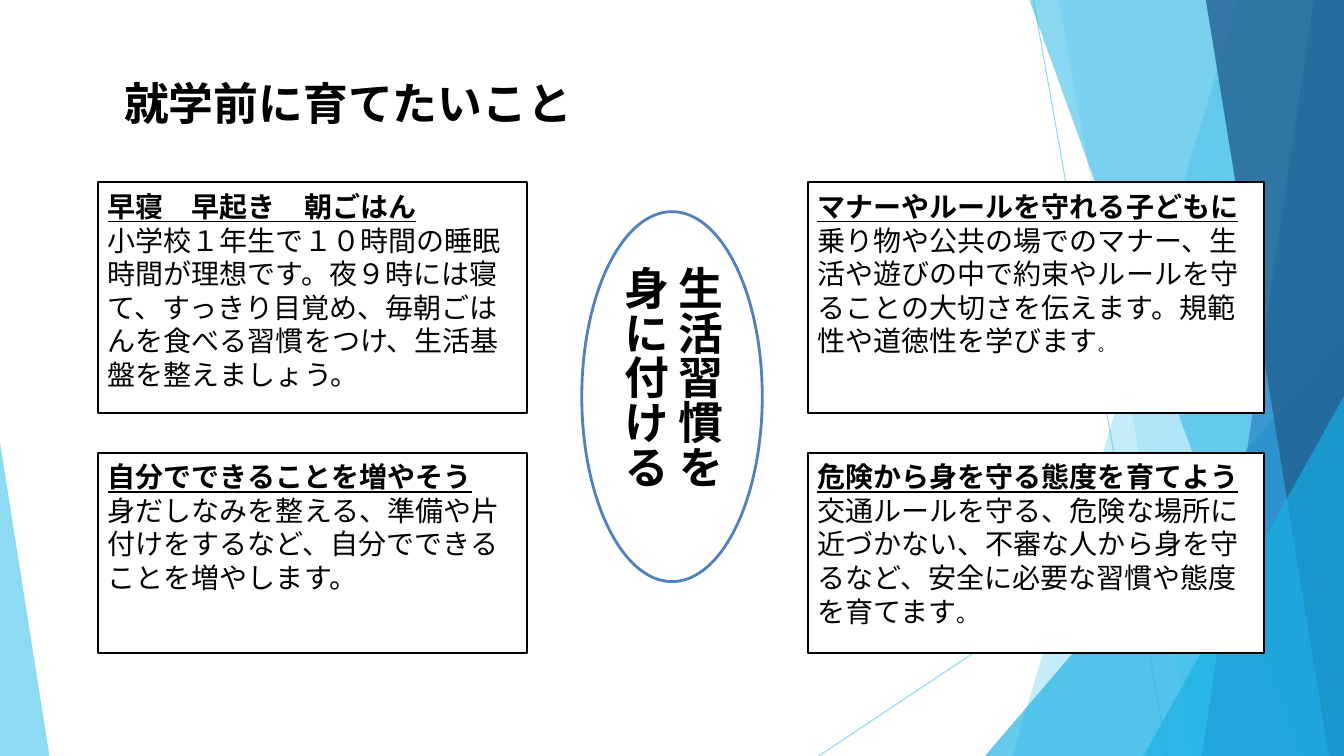
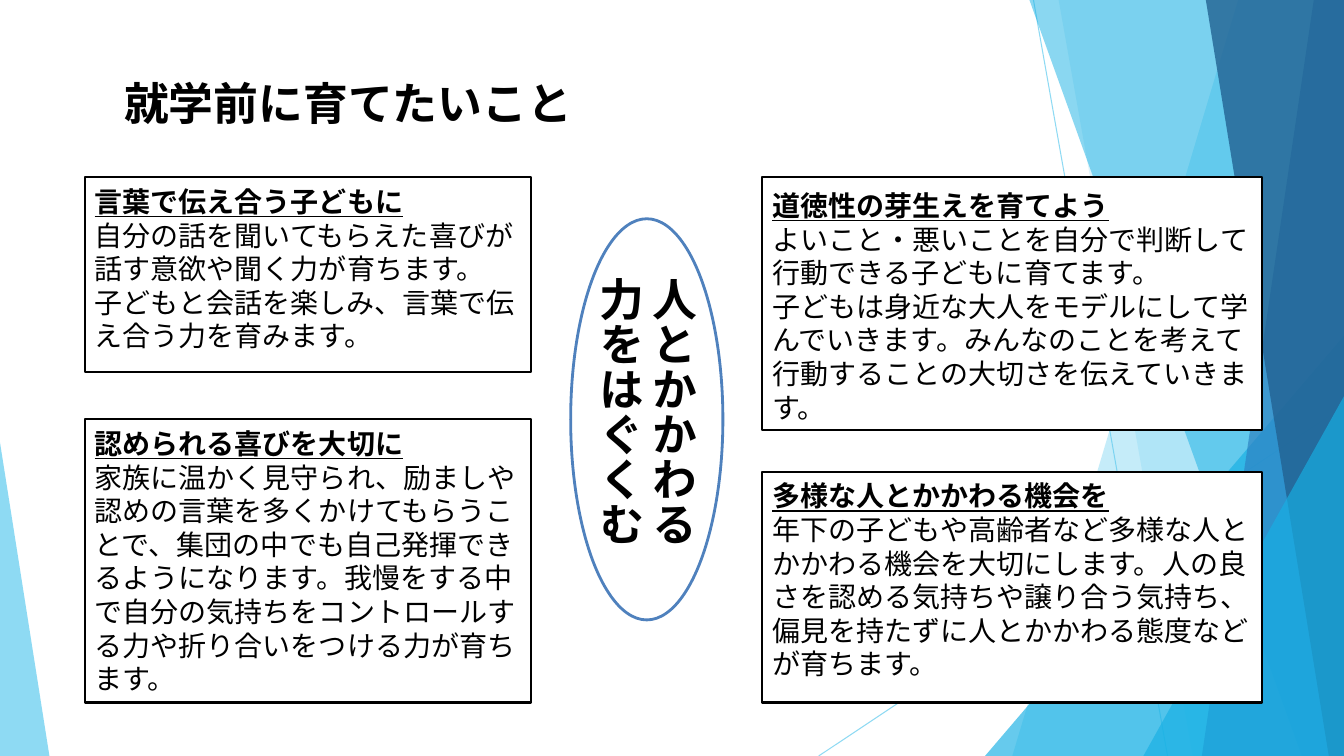
from lxml.etree import SubElement
from pptx import Presentation
from pptx.dml.color import RGBColor
from pptx.enum.lang import MSO_LANGUAGE_ID
from pptx.enum.shapes import MSO_CONNECTOR, MSO_SHAPE
from pptx.enum.text import MSO_ANCHOR, MSO_AUTO_SIZE, PP_ALIGN
from pptx.oxml.ns import qn
from pptx.util import Inches, Pt

WIDTH, HEIGHT = 13.33, 7.5
LATIN, JAPANESE = "Arial", "Noto Sans CJK JP"
BLACK, WHITE, OUTLINE = "000000", "FFFFFF", "4F81BD"
SKY, CYAN, BLUE, NAVY = "5FCBEF", "17B0E4", "2E83C3", "226292"
TITLE = "就学前に育てたいこと"


def rgb(color):
    return RGBColor.from_string(color)


def set_alpha(sp, percent):
    """Make the first solid colour of the shape partly transparent."""
    color = next(sp.element.spPr.iter(qn("a:srgbClr")))
    SubElement(color, qn("a:alpha")).set("val", str(percent * 1000))


def add_run(p, text, size=20, font=LATIN, bold=False, underline=False):
    r = p.add_run()
    r.text = text
    f = r.font
    f.name, f.size, f.bold, f.underline = font, Pt(size), bold, underline
    f.language_id = MSO_LANGUAGE_ID.JAPANESE
    f.color.rgb = rgb(BLACK)
    latin = r._r.rPr.find(qn("a:latin"))
    ea = latin.makeelement(qn("a:ea"), {"typeface": JAPANESE})
    latin.addnext(ea)


class Deck:
    def __init__(self):
        self.prs = Presentation()
        self.prs.slide_width = Inches(WIDTH)
        self.prs.slide_height = Inches(HEIGHT)
        self.layout = self.prs.slide_layouts[5]
        self.slide = None
        self.place_title()

    def place_title(self):
        sp = self.layout.placeholders[0]
        sp.left, sp.top = Inches(0.69), Inches(0.7)
        sp.width, sp.height = Inches(10.96), Inches(0.64)

    def add_slide(self, title):
        first = self.slide is None
        self.slide = self.prs.slides.add_slide(self.layout)
        if first:
            self.decorate_layout()
        tf = self.slide.shapes.title.text_frame
        tf.auto_size = MSO_AUTO_SIZE.NONE
        tf.vertical_anchor = MSO_ANCHOR.MIDDLE
        tf.margin_left = Inches(0.54)
        p = tf.paragraphs[0]
        p.alignment = PP_ALIGN.LEFT
        add_run(p, title, size=32, font=JAPANESE, bold=True)

    def decorate_layout(self):
        """Draw the facets on the current slide, then move them to the layout."""
        facets = [
            self.ray(10.25, 0, 11.58, HEIGHT),
            self.ray(WIDTH, 4.03, 8.12, HEIGHT),
            self.band(12.28, 10.04, SKY, 36),
            self.band(10.5, 11.83, SKY, 20),
            self.triangle(9.77, 3.33, 3.56, 1, CYAN, 66),
            self.band(10.21, 12.91, CYAN, 50),
            self.band(13.03, 11.92, BLUE, 70),
            self.band(11.96, 13.18, NAVY, 80),
            self.triangle(11.34, 3.93, 1.99, 1, CYAN, 66),
            self.triangle(0, 4.39, 0.49, 0, SKY, 70),
        ]
        for number, sp in enumerate(facets, start=100):
            next(sp.element.iter(qn("p:cNvPr"))).set("id", str(number))
            self.layout.shapes.element.append(sp.element)

    def ray(self, x1, y1, x2, y2):
        line = self.slide.shapes.add_connector(
            MSO_CONNECTOR.STRAIGHT, Inches(x1), Inches(y1), Inches(x2), Inches(y2))
        line.line.color.rgb = rgb(SKY)
        line.line.width = Pt(0.75)
        set_alpha(line, 70)
        SubElement(line.element.spPr, qn("a:effectLst"))
        return line

    def band(self, top_x, bottom_x, color, alpha):
        """Fill from a slanted edge to the right side of the slide."""
        corners = [(WIDTH, 0), (WIDTH, HEIGHT), (bottom_x, HEIGHT)]
        builder = self.slide.shapes.build_freeform(Inches(top_x), 0)
        builder.add_line_segments([(Inches(x), Inches(y)) for x, y in corners])
        return self.style(builder.convert_to_shape(), color, alpha=alpha)

    def triangle(self, x, y, w, apex, color, alpha):
        """Stand a right triangle on the bottom edge; apex is 0 (left) or 1 (right)."""
        sp = self.shape(MSO_SHAPE.ISOSCELES_TRIANGLE, x, y, w, HEIGHT - y)
        sp.adjustments[0] = apex
        return self.style(sp, color, alpha=alpha)

    def shape(self, kind, x, y, w, h):
        return self.slide.shapes.add_shape(
            kind, Inches(x), Inches(y), Inches(w), Inches(h))

    def style(self, sp, fill, line=None, width=1.5, alpha=None):
        sp.shadow.inherit = False
        sp.fill.solid()
        sp.fill.fore_color.rgb = rgb(fill)
        if alpha is not None:
            set_alpha(sp, alpha)
        if line:
            sp.line.color.rgb = rgb(line)
            sp.line.width = Pt(width)
        else:
            sp.line.fill.background()
        return sp

    def frame(self, sp, anchor, side=0, top=0, bottom=0):
        tf = sp.text_frame
        tf.word_wrap = True
        tf.vertical_anchor = anchor
        tf.margin_left = tf.margin_right = Inches(side)
        tf.margin_top, tf.margin_bottom = Inches(top), Inches(bottom)
        return tf

    def card(self, x, y, w, h, heading, *body, top=0.07, stop_size=20):
        """Draw a box with heading and body; stop_size sizes the final full stop."""
        sp = self.style(self.shape(MSO_SHAPE.RECTANGLE, x, y, w, h), WHITE, BLACK)
        tf = self.frame(sp, MSO_ANCHOR.TOP, side=0.1, top=top)
        add_run(tf.paragraphs[0], heading, bold=True, underline=True)
        for text in body:
            p = tf.add_paragraph()
            if stop_size == 20:
                add_run(p, text)
            else:
                add_run(p, text[:-1])
                add_run(p, text[-1], size=stop_size)
        for p in tf.paragraphs:
            p.alignment = PP_ALIGN.LEFT
            p.line_spacing = Pt(24)

    def theme(self, x, y, w, h, text):
        """Draw the central ellipse with vertical text."""
        sp = self.style(self.shape(MSO_SHAPE.OVAL, x, y, w, h), WHITE, OUTLINE, width=2)
        tf = self.frame(sp, MSO_ANCHOR.MIDDLE)
        sp.element.txBody.bodyPr.set("vert", "eaVert")
        p = tf.paragraphs[0]
        p.alignment = PP_ALIGN.LEFT
        p.line_spacing = Pt(38)
        add_run(p, text, size=32, font=JAPANESE, bold=True)


def add_habits(deck):
    deck.add_slide(TITLE)
    left, right = (0.97, 4.26), (8.01, 4.53)
    upper, lower = (1.81, 2.29), (4.49, 1.99)

    def card(column, row, *text, **options):
        deck.card(column[0], row[0], column[1], row[1], *text, **options)

    card(left, upper, "早寝　早起き　朝ごはん",
         "小学校１年生で１０時間の睡眠時間が理想です。夜９時には寝て、すっきり目覚め、"
         "毎朝ごはんを食べる習慣をつけ、生活基盤を整えましょう。")
    card(right, upper, "マナーやルールを守れる子どもに",
         "乗り物や公共の場でのマナー、生活や遊びの中で約束やルールを守ることの大切さを"
         "伝えます。規範性や道徳性を学びます。", stop_size=11)
    card(right, lower, "危険から身を守る態度を育てよう",
         "交通ルールを守る、危険な場所に近づかない、不審な人から身を守るなど、"
         "安全に必要な習慣や態度を育てます。", stop_size=16)
    deck.theme(5.77, 2.1, 1.79, 3.67, "生活習慣を身に付ける")
    card(left, lower, "自分でできることを増やそう",
         "身だしなみを整える、準備や片付けをするなど、自分でできることを増やします。")


def add_relations(deck):
    deck.add_slide(TITLE)
    left_x, left_w, right_x, right_w = 0.84, 4.43, 7.56, 4.96
    top, bottom = 1.76, 6.97
    deck.card(left_x, top, left_w, 1.93, "言葉で伝え合う子どもに",
              "自分の話を聞いてもらえた喜びが話す意欲や聞く力が育ちます。",
              "子どもと会話を楽しみ、言葉で伝え合う力を育みます。")
    deck.card(left_x, bottom - 2.81, left_w, 2.81, "認められる喜びを大切に",
              "家族に温かく見守られ、励ましや認めの言葉を多くかけてもらうことで、"
              "集団の中でも自己発揮できるようになります。我慢をする中で自分の気持ちを"
              "コントロールする力や折り合いをつける力が育ちます。")
    deck.card(right_x, top, right_w, 2.51, "道徳性の芽生えを育てよう",
              "よいこと・悪いことを自分で判断して行動できる子どもに育てます。",
              "子どもは身近な大人をモデルにして学んでいきます。みんなのことを考えて"
              "行動することの大切さを伝えていきます。", top=0.11)
    deck.card(right_x, bottom - 2.29, right_w, 2.29, "多様な人とかかわる機会を",
              "年下の子どもや高齢者など多様な人とかかわる機会を大切にします。"
              "人の良さを認める気持ちや譲り合う気持ち、偏見を持たずに人とかかわる"
              "態度などが育ちます。")
    deck.theme(5.66, 2.17, 1.51, 3.98, "人とかかわる力をはぐくむ")


def main():
    deck = Deck()
    add_habits(deck)
    add_relations(deck)
    deck.prs.save("out.pptx")


if __name__ == "__main__":
    main()
